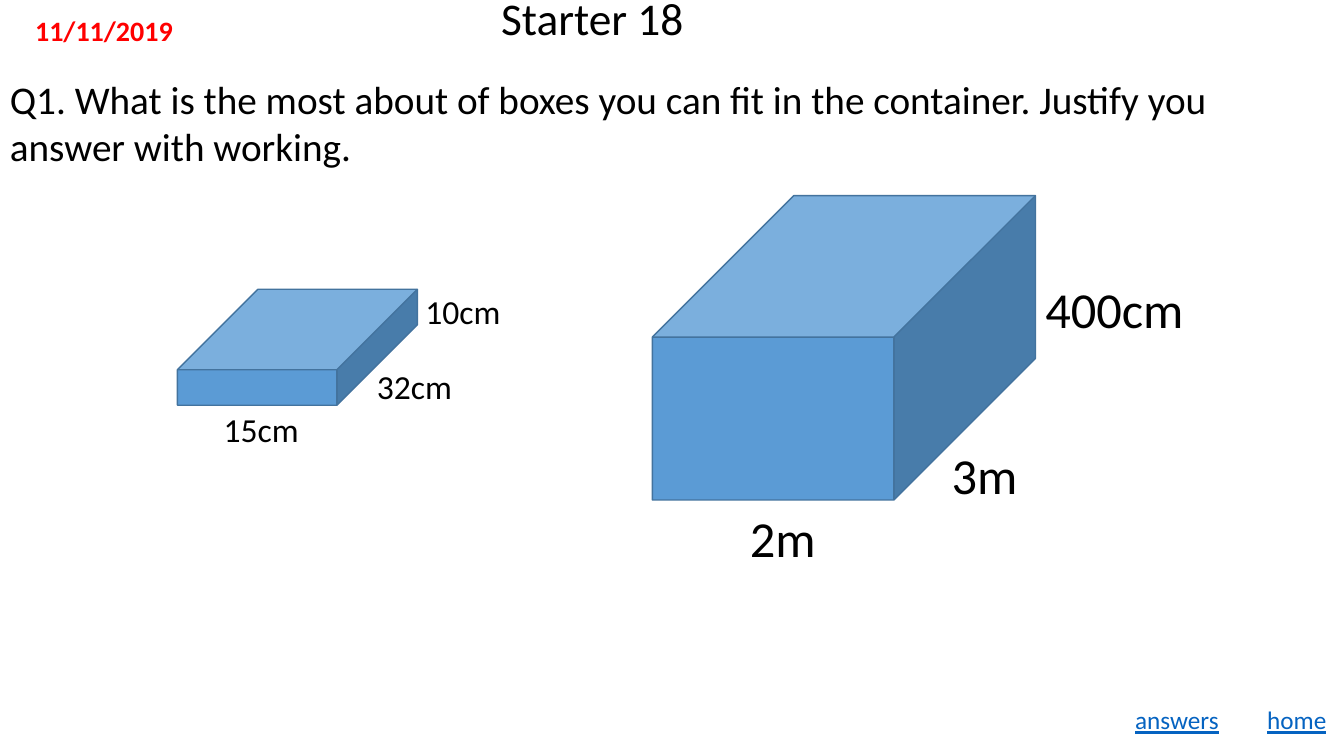
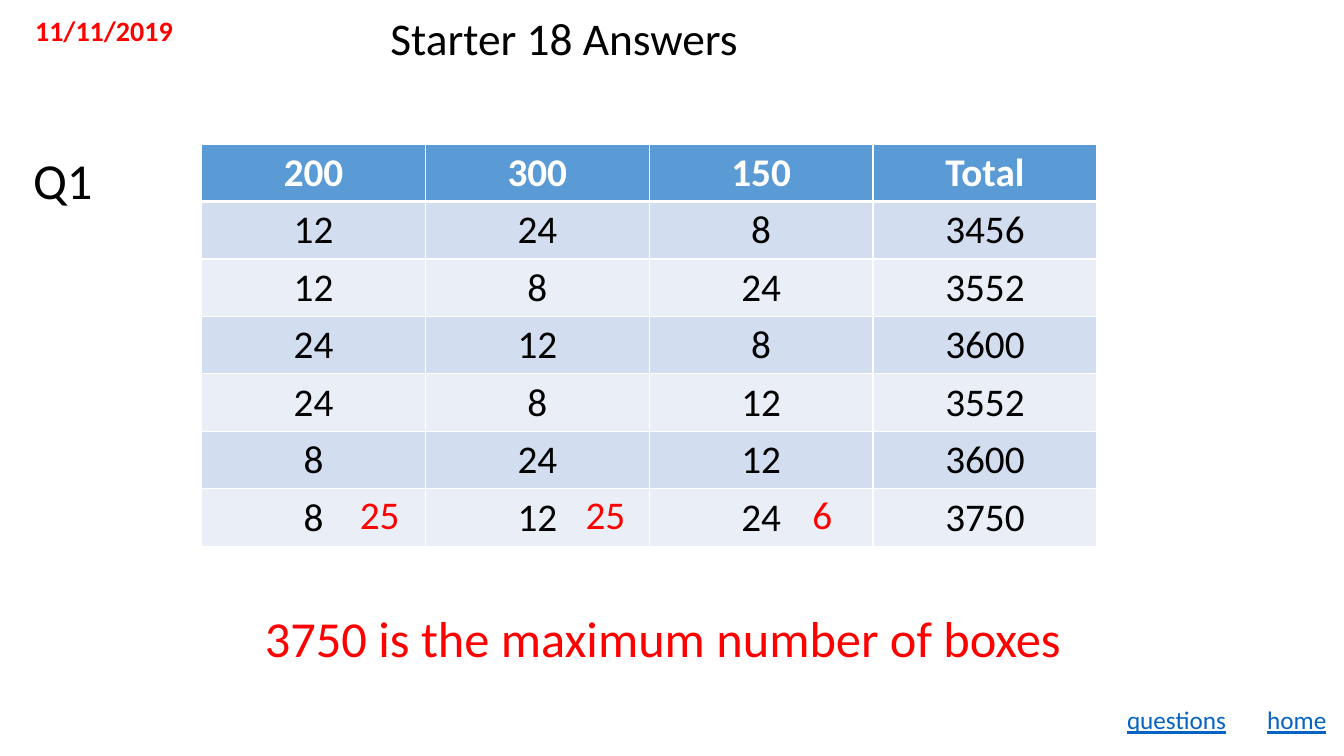
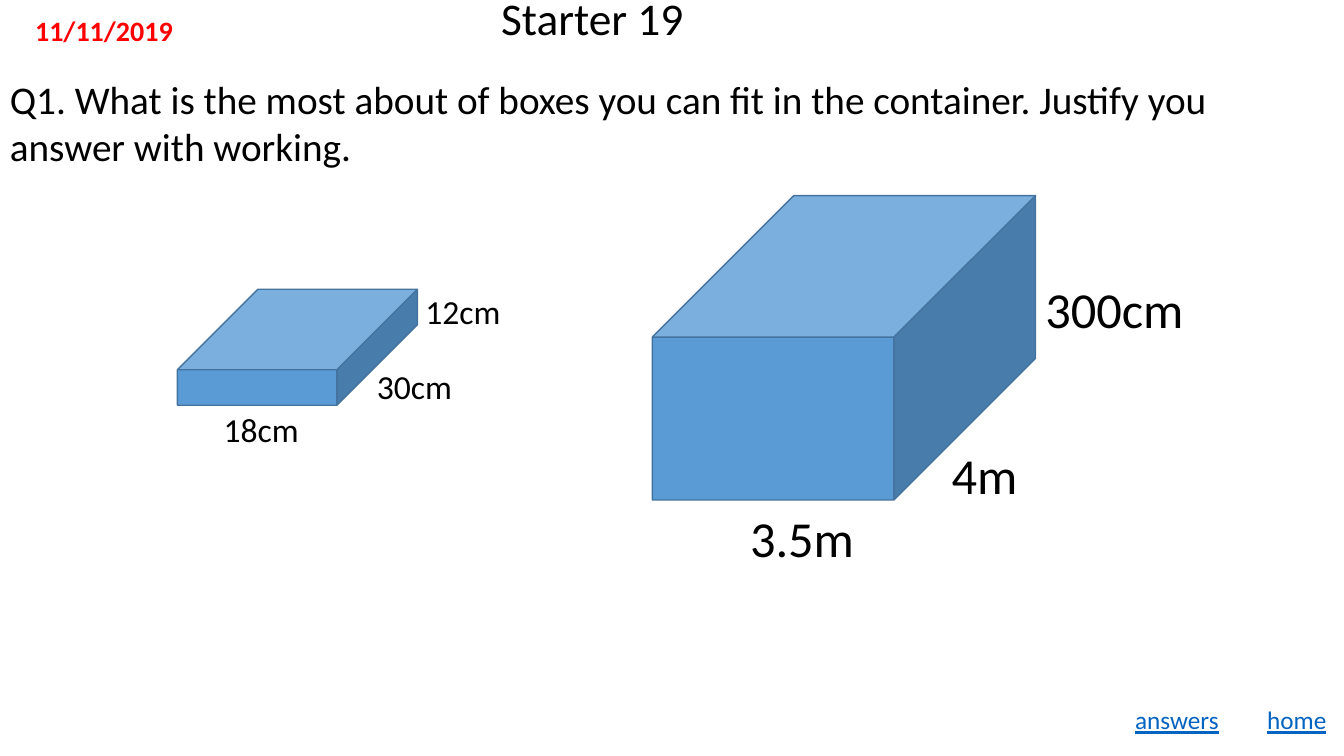
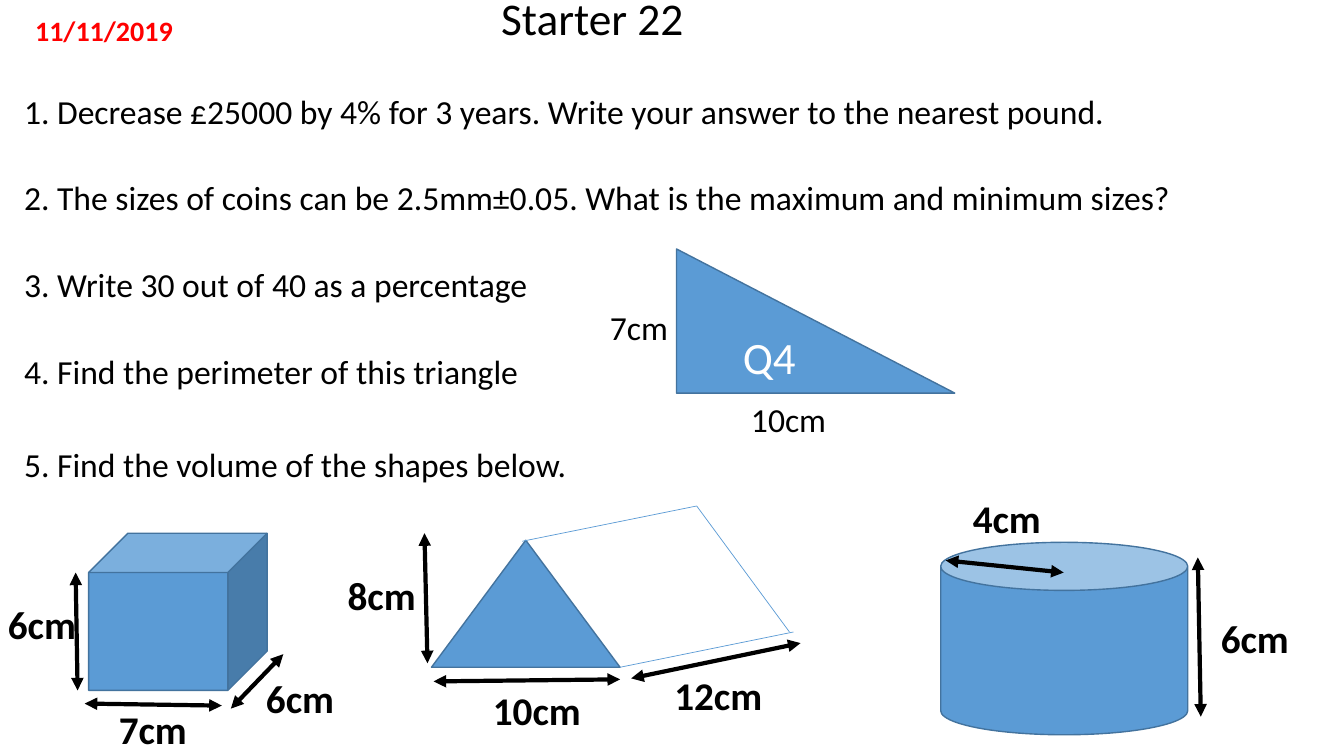
import dataclasses
import typing

import lxml.etree
import pptx
import pptx.dml.color
import pptx.enum.shapes
import pptx.enum.text
import pptx.oxml.ns
import pptx.util

RGB = pptx.dml.color.RGBColor
MSO = pptx.enum.shapes.MSO_SHAPE
ALIGN = pptx.enum.text.PP_ALIGN
ANCHOR = pptx.enum.text.MSO_ANCHOR
AUTO = pptx.enum.text.MSO_AUTO_SIZE
qn = pptx.oxml.ns.qn

PX_PER_INCH = 100
EMU_PER_PX = 914400 // PX_PER_INCH


@dataclasses.dataclass(frozen=True)
class Theme:
    font: str = "Calibri"
    black: RGB = RGB(0x00, 0x00, 0x00)
    white: RGB = RGB(0xFF, 0xFF, 0xFF)
    red: RGB = RGB(0xFF, 0x00, 0x00)
    link: RGB = RGB(0x05, 0x63, 0xC1)
    blue: RGB = RGB(0x5B, 0x9B, 0xD5)
    outline: RGB = RGB(0x43, 0x73, 0x9E)
    band_dark: RGB = RGB(0xD2, 0xDE, 0xEF)
    band_light: RGB = RGB(0xEA, 0xEF, 0xF7)
    title_pt: float = 32.4
    big_pt: int = 36
    shape_pt: int = 32
    body_pt: int = 28
    label_pt: int = 24
    date_pt: int = 20
    link_pt: int = 18


T = Theme()


@dataclasses.dataclass(frozen=True)
class Label:
    text: str
    x: int
    y: int
    w: int
    size: int = T.label_pt
    color: RGB = T.black
    bold: bool = False
    underline: bool = False
    wrap: bool = False
    lines: int = 1


@dataclasses.dataclass(frozen=True)
class Solid:
    kind: MSO
    x: int
    y: int
    w: int
    h: int
    adj: typing.Optional[float] = None
    text: str = ""


@dataclasses.dataclass(frozen=True)
class Line:
    x1: int
    y1: int
    x2: int
    y2: int


@dataclasses.dataclass(frozen=True)
class BoxStarter:
    title: str
    box: typing.Tuple[str, str, str]
    container: typing.Tuple[str, str, str]
    base_w: int


# Slide content
DATE = "11/11/2019"
BOX_QUESTION = ("Q1. What is the most about of boxes you can fit in the "
                "container. Justify you answer with working.")
STARTER_18 = BoxStarter("Starter 18", ("15cm", "32cm", "10cm"),
                        ("2m", "3m", "400cm"), 86)
STARTER_19 = BoxStarter("Starter 19", ("18cm", "30cm", "12cm"),
                        ("3.5m", "4m", "300cm"), 125)
BOX_CUBES = (
    Solid(MSO.CUBE, 176, 287, 238, 115, 0.694),
    Solid(MSO.CUBE, 647, 194, 380, 302, 0.465),
)

PACKINGS = (
    ("200", "300", "150", "Total"),
    ("12", "24", "8", "3456"),
    ("12", "8", "24", "3552"),
    ("24", "12", "8", "3600"),
    ("24", "8", "12", "3552"),
    ("8", "24", "12", "3600"),
    ("8", "12", "24", "3750"),
)
ANSWER_LABELS = (
    Label("Q1", 23, 143, 80, T.big_pt),
    Label("25", 347, 482, 60, T.body_pt, T.red),
    Label("25", 571, 482, 60, T.body_pt, T.red),
    Label("6", 796, 482, 40, T.body_pt, T.red),
    Label("3750 is the maximum number of boxes", 253, 597, 817, T.big_pt, T.red),
)

QUESTIONS = (
    Label("1. Decrease £25000 by 4% for 3 years. Write your answer to the "
          "nearest pound.", 14, 85, 1093),
    Label("2. The sizes of coins can be 2.5mm±0.05. What is the maximum and "
          "minimum sizes?", 14, 171, 1164),
    Label("3. Write 30 out of 40 as a percentage", 14, 257, 524),
    Label("4. Find the perimeter of this triangle", 14, 343, 515),
    Label("5. Find the volume of the shapes below.", 14, 435, 563),
    Label("7cm", 595, 300, 78),
    Label("10cm", 735, 391, 95),
)
VOLUME_SOLIDS = (
    Solid(MSO.RIGHT_TRIANGLE, 671, 247, 276, 143, text="Q4"),
    Solid(MSO.CUBE, 88, 529, 177, 156),
    Solid(MSO.CAN, 933, 538, 245, 191),
    Solid(MSO.ISOSCELES_TRIANGLE, 428, 536, 187, 126),
)
PRISM_EDGES = (
    Line(518, 537, 691, 502),
    Line(615, 662, 787, 627),
    Line(691, 502, 783, 627),
)
DIMENSION_ARROWS = (
    Line(1188, 553, 1191, 711),
    Line(938, 556, 1055, 568),
    Line(430, 676, 615, 674),
    Line(626, 673, 794, 638),
    Line(424, 658, 421, 529),
    Line(77, 685, 75, 568),
    Line(84, 698, 220, 700),
    Line(229, 703, 281, 649),
)
DIMENSIONS = (
    ("6cm", 254, 664, 107),
    ("7cm", 108, 695, 107),
    ("6cm", -2, 591, 107),
    ("10cm", 479, 676, 136),
    ("12cm", 659, 661, 136),
    ("8cm", 335, 562, 136),
    ("4cm", 955, 485, 136),
    ("6cm", 1201, 605, 136),
)


def px(n: int) -> pptx.util.Emu:
    return pptx.util.Emu(n * EMU_PER_PX)


def add_run(p, text: str, size: float, color: RGB, bold: bool = False,
            underline: bool = False) -> None:
    r = p.add_run()
    r.text = text
    r.font.name = T.font
    r.font.size = pptx.util.Pt(size)
    r.font.color.rgb = color
    r.font.bold = bold
    if underline:
        r.font.underline = True


def add_label(s, label: Label) -> None:
    """Text box as tall as its lines plus the default insets."""
    h = int(label.lines * label.size * 1.22 * PX_PER_INCH / 72) + 10
    sp = s.shapes.add_textbox(px(label.x), px(label.y), px(label.w), px(h))
    tf = sp.text_frame
    tf.word_wrap = label.wrap
    tf.auto_size = AUTO.SHAPE_TO_FIT_TEXT
    add_run(tf.paragraphs[0], label.text, label.size, label.color,
            label.bold, label.underline)


def add_solid(s, solid: Solid) -> None:
    sp = s.shapes.add_shape(solid.kind, px(solid.x), px(solid.y),
                            px(solid.w), px(solid.h))
    sp.shadow.inherit = False
    sp.fill.solid()
    sp.fill.fore_color.rgb = T.blue
    sp.line.color.rgb = T.outline
    sp.line.width = pptx.util.Pt(1)
    if solid.adj is not None:
        sp.adjustments[0] = solid.adj
    if solid.text:
        tf = sp.text_frame
        tf.vertical_anchor = ANCHOR.MIDDLE
        p = tf.paragraphs[0]
        p.alignment = ALIGN.CENTER
        add_run(p, solid.text, T.shape_pt, T.white)


def add_line(s, line: Line, color: RGB, width: float,
             arrows: bool = False) -> None:
    cx = s.shapes.add_connector(pptx.enum.shapes.MSO_CONNECTOR.STRAIGHT,
                                px(line.x1), px(line.y1),
                                px(line.x2), px(line.y2))
    cx.line.color.rgb = color
    cx.line.width = pptx.util.Pt(width)
    sp_pr = cx._element.spPr
    if arrows:
        ln = sp_pr.find(qn("a:ln"))
        for end in ("a:headEnd", "a:tailEnd"):
            lxml.etree.SubElement(ln, qn(end), type="triangle")
    lxml.etree.SubElement(sp_pr, qn("a:effectLst"))


def set_borders(cell, top: int, bottom: int) -> None:
    """White borders; they must precede the fill in the cell properties."""
    tc_pr = cell._tc.get_or_add_tcPr()
    widths = (("a:lnL", 1), ("a:lnR", 1), ("a:lnT", top), ("a:lnB", bottom))
    for i, (tag, width) in enumerate(widths):
        ln = lxml.etree.Element(qn(tag), w=str(pptx.util.Pt(width)))
        fill = lxml.etree.SubElement(ln, qn("a:solidFill"))
        lxml.etree.SubElement(fill, qn("a:srgbClr"), val=str(T.white))
        tc_pr.insert(i, ln)


def add_packing_table(s) -> None:
    rows, cols = len(PACKINGS), len(PACKINGS[0])
    frame = s.shapes.add_table(rows, cols, px(200), px(143),
                               px(222 * cols), px(57 * rows))
    table = frame.table
    table.horz_banding = False
    table.first_row = False
    for i, values in enumerate(PACKINGS):
        header = i == 0
        fill = T.blue if header else T.band_dark if i % 2 else T.band_light
        for j, value in enumerate(values):
            cell = table.cell(i, j)
            cell.fill.solid()
            cell.fill.fore_color.rgb = fill
            set_borders(cell, 3 if i == 1 else 1, 3 if header else 1)
            p = cell.text_frame.paragraphs[0]
            p.alignment = ALIGN.CENTER
            add_run(p, value, T.body_pt, T.white if header else T.black, header)


def new_slide(prs, title: str, x: int = 303, y: int = -10):
    """Blank slide with the shared title and date."""
    s = prs.slides.add_slide(prs.slide_layouts[6])
    tf = s.shapes.add_textbox(px(x), px(y), px(569), px(60)).text_frame
    tf.word_wrap = True
    tf.vertical_anchor = ANCHOR.BOTTOM
    p = tf.paragraphs[0]
    p.alignment = ALIGN.CENTER
    p.line_spacing = 0.9
    add_run(p, title, T.title_pt, T.black)

    tf = s.shapes.add_textbox(px(25), px(10), px(300), px(40)).text_frame
    tf.word_wrap = True
    tf.vertical_anchor = ANCHOR.MIDDLE
    add_run(tf.paragraphs[0], DATE, T.date_pt, T.red, True)
    return s


def add_footer(s, text: str, x: int, w: int) -> None:
    for name, left, width in (("home", 1247, 80), (text, x, w)):
        add_label(s, Label(name, left, 694, width, T.link_pt, T.link,
                           underline=True))


def box_slide(prs, starter: BoxStarter) -> None:
    s = new_slide(prs, starter.title)
    add_label(s, Label(BOX_QUESTION, 0, 70, 1314, T.body_pt, wrap=True, lines=2))
    add_footer(s, "answers", 1116, 104)
    for cube in BOX_CUBES:
        add_solid(s, cube)
    box_places = ((212, 401, 95), (364, 358, 95), (412, 284, 95))
    container_places = ((734, 498, starter.base_w), (934, 436, 86),
                        (1027, 271, 159))
    for texts, places, size in (
            (starter.box, box_places, T.label_pt),
            (starter.container, container_places, T.big_pt)):
        for text, place in zip(texts, places):
            add_label(s, Label(text, *place, size))


def answer_slide(prs) -> None:
    s = new_slide(prs, "Starter 18 Answers", 275, 10)
    add_footer(s, "questions", 1108, 120)
    add_packing_table(s)
    for label in ANSWER_LABELS:
        add_label(s, label)


def mixed_slide(prs) -> None:
    s = new_slide(prs, "Starter 22")
    for label in QUESTIONS:
        add_label(s, label)
    for solid in VOLUME_SOLIDS:
        add_solid(s, solid)
    for edge in PRISM_EDGES:
        add_line(s, edge, T.blue, 0.5)
    for arrow in DIMENSION_ARROWS:
        add_line(s, arrow, T.black, 3, arrows=True)
    for dimension in DIMENSIONS:
        add_label(s, Label(*dimension, T.body_pt, bold=True, wrap=True))


def main() -> None:
    prs = pptx.Presentation()
    prs.slide_width, prs.slide_height = px(1333), px(750)
    box_slide(prs, STARTER_18)
    answer_slide(prs)
    box_slide(prs, STARTER_19)
    mixed_slide(prs)
    prs.save("out.pptx")


if __name__ == "__main__":
    main()
